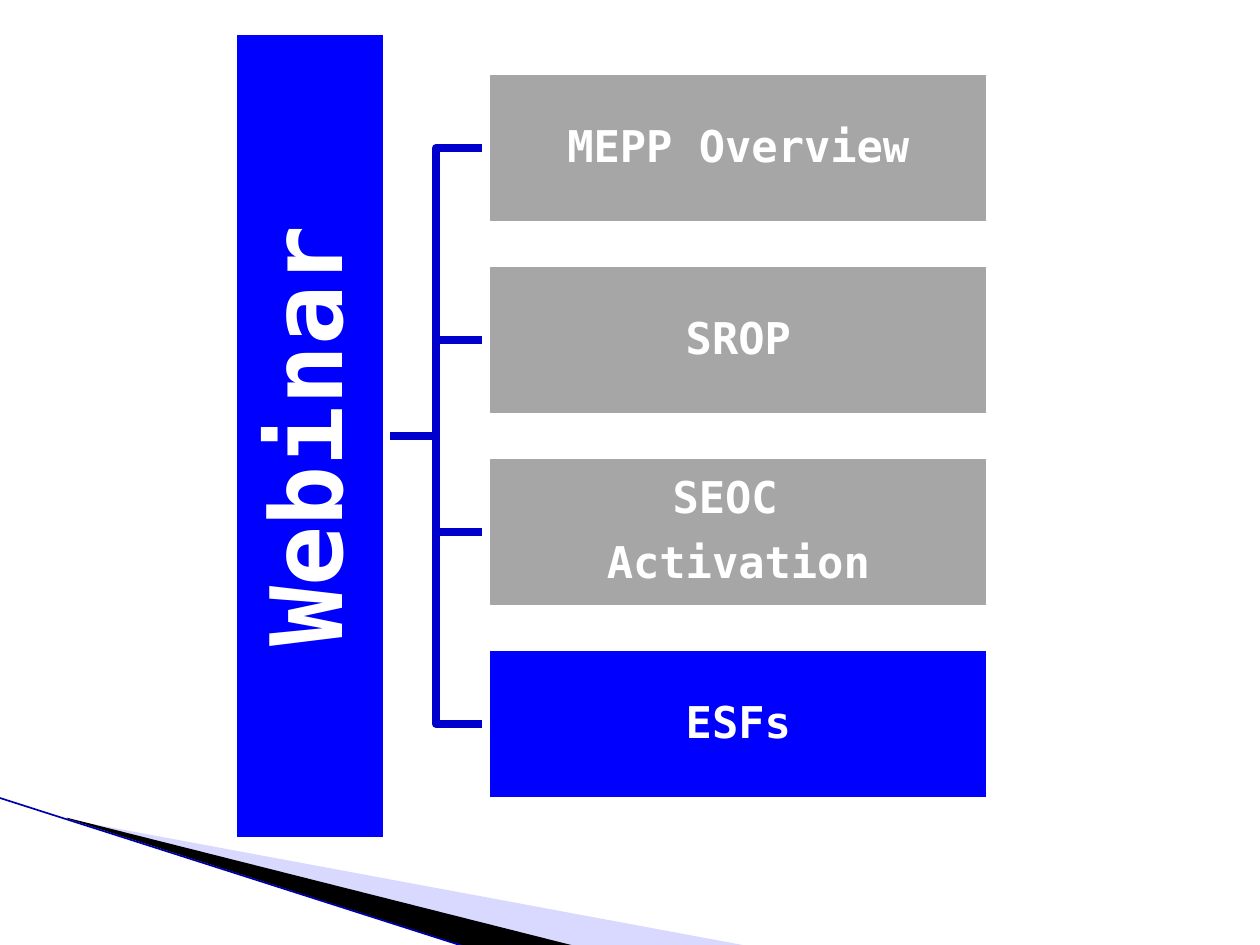
from lxml.etree import SubElement
from pptx import Presentation
from pptx.dml.color import RGBColor
from pptx.enum.shapes import MSO_CONNECTOR, MSO_SHAPE
from pptx.enum.text import MSO_ANCHOR, PP_ALIGN
from pptx.oxml.ns import qn
from pptx.util import Pt

COLORS = {
    "white": "FFFFFF",
    "black": "000000",
    "active": "0000FF",
    "inactive": "A6A6A6",
    "branch": "0000CC",
    "sweep": "A2A2FF",
    "edge": "0000AA",
}
FONT = "DejaVu Sans Mono"
LINE_WIDTH = 4.33
CENTER_Y = 249.1
ROOT_X = 177.1
ROOT_LENGTH = 462.2
BOX_HEIGHT = 87.8
BOX_WIDTH = 288
BOX_LEFT = 277.9
BOX_PITCH = 109.7
BRANCH_LEFT = 220.3
TOPICS = [
    ("MEPP Overview", "inactive"),
    ("SROP", "inactive"),
    ("SEOC \nActivation", "inactive"),
    ("ESFs", "active"),
]


def color(name):
    return RGBColor.from_string(COLORS[name])


def write_text(shape, text, size, inset):
    frame = shape.text_frame
    frame.word_wrap = True
    frame.vertical_anchor = MSO_ANCHOR.MIDDLE
    frame.margin_left = frame.margin_right = Pt(inset)
    frame.margin_top = frame.margin_bottom = Pt(inset)
    frame.text = text
    for para in frame.paragraphs:
        para.alignment = PP_ALIGN.CENTER
        para.line_spacing = 0.9
        para.space_after = Pt(round(size * 0.41, 1))
        para.font.name = FONT
        para.font.size = Pt(size)
        para.font.bold = True
        para.font.color.rgb = color("white")


def add_box(page, text, center_x, center_y, width, fill, size, inset, rotation=0):
    box = page.shapes.add_shape(
        MSO_SHAPE.RECTANGLE,
        Pt(center_x - width / 2), Pt(center_y - BOX_HEIGHT / 2),
        Pt(width), Pt(BOX_HEIGHT),
    )
    box.rotation = rotation
    box.shadow.inherit = False
    box.fill.solid()
    box.fill.fore_color.rgb = color(fill)
    box.line.color.rgb = color("white")
    box.line.width = Pt(LINE_WIDTH)
    write_text(box, text, size, inset)


def add_outline(page, points, close):
    start, *rest = [(Pt(x), Pt(y)) for x, y in points]
    builder = page.shapes.build_freeform(*start)
    builder.add_line_segments(rest, close=close)
    outline = builder.convert_to_shape()
    outline.shadow.inherit = False
    return outline


def add_branch(page, end_y):
    middle = (BRANCH_LEFT + BOX_LEFT) / 2
    points = [(BRANCH_LEFT, CENTER_Y), (middle, CENTER_Y), (middle, end_y), (BOX_LEFT, end_y)]
    branch = add_outline(page, points, close=False)
    branch.fill.background()
    branch.line.color.rgb = color("branch")
    branch.line.width = Pt(LINE_WIDTH)


def add_wedge(page, points, fill, opacity=100):
    wedge = add_outline(page, points, close=True)
    wedge.fill.solid()
    wedge.fill.fore_color.rgb = color(fill)
    wedge.line.fill.background()
    if opacity < 100:
        tint = wedge.fill._xPr.find(qn("a:solidFill"))[0]
        SubElement(tint, qn("a:alpha"), val=str(opacity * 1000))


def add_edge(page, start, end):
    edge = page.shapes.add_connector(
        MSO_CONNECTOR.STRAIGHT, *[Pt(value) for value in (*start, *end)]
    )
    edge.line.color.rgb = color("edge")
    edge.line.width = Pt(0.95)
    SubElement(edge._element.spPr, qn("a:effectLst"))


def add_corner(page):
    add_wedge(page, [(39.6, 468.4), (428.4, 540.7), (328.3, 540.7), (39.6, 468)], "sweep", 40)
    add_wedge(page, [(38.2, 467.3), (329, 540.7), (267.8, 541.4), (38.9, 468)], "black")
    add_edge(page, (-0.7, 455.8), (267.1, 541.4))


def main():
    deck = Presentation()
    deck.slide_width, deck.slide_height = Pt(720), Pt(540)
    page = deck.slides.add_slide(deck.slide_layouts[6])
    page.background.fill.solid()
    page.background.fill.fore_color.rgb = color("white")
    add_corner(page)

    first_y = CENTER_Y - BOX_PITCH * (len(TOPICS) - 1) / 2
    centers = [first_y + BOX_PITCH * index for index in range(len(TOPICS))]
    for center_y in reversed(centers):
        add_branch(page, center_y)
    add_box(page, "Webinar", ROOT_X, CENTER_Y, ROOT_LENGTH, "active", 57, 2.9, rotation=270)
    for (text, fill), center_y in zip(TOPICS, centers):
        add_box(page, text, BOX_LEFT + BOX_WIDTH / 2, center_y, BOX_WIDTH, fill, 25, 1.4)
    deck.save("out.pptx")


if __name__ == "__main__":
    main()
